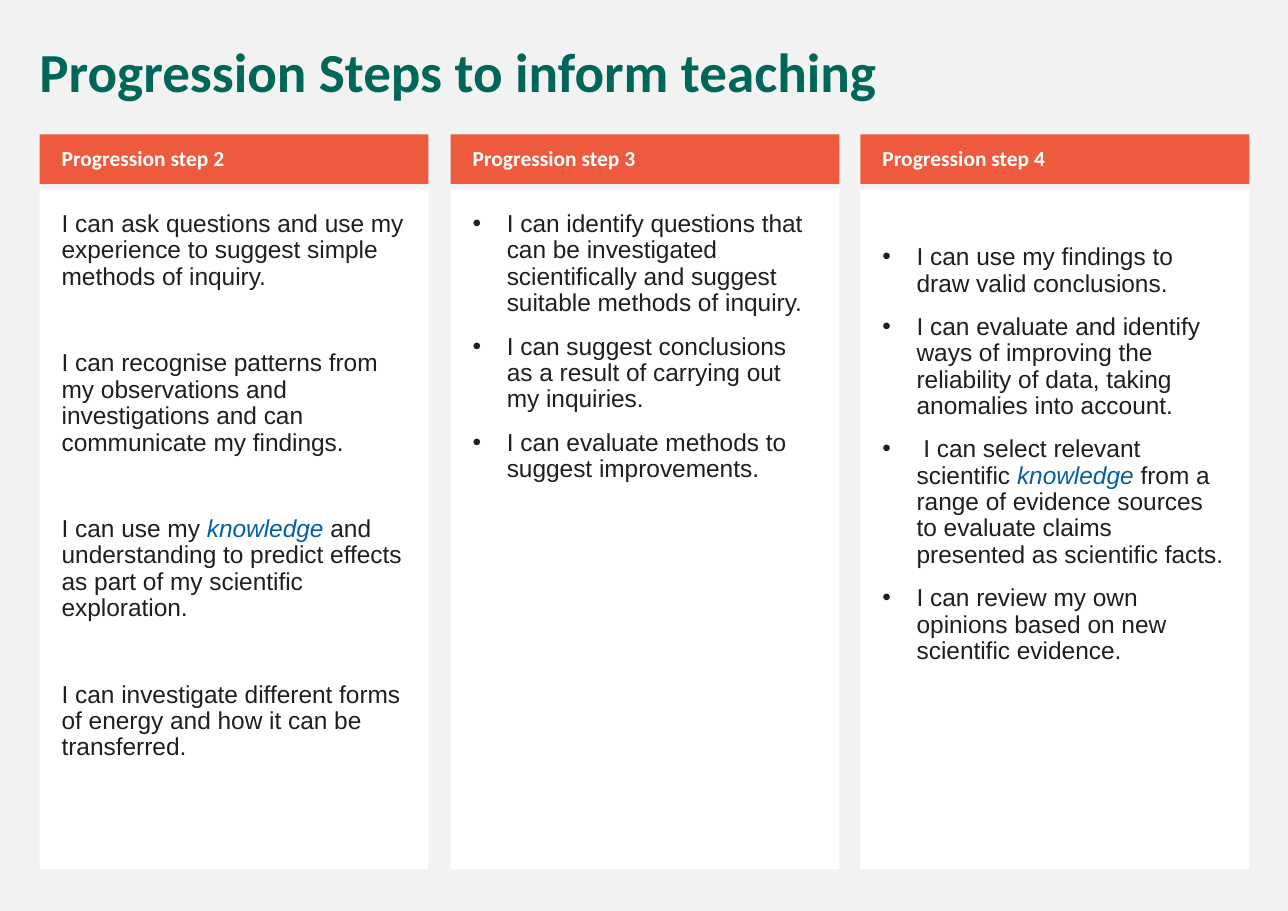
from lxml.etree import SubElement
from pptx import Presentation
from pptx.dml.color import RGBColor
from pptx.enum.shapes import MSO_SHAPE
from pptx.enum.text import MSO_ANCHOR, PP_ALIGN
from pptx.oxml.ns import qn
from pptx.util import Inches, Pt

BACKGROUND = RGBColor(0xF2, 0xF2, 0xF2)
GREEN = RGBColor(0x00, 0x67, 0x58)
ORANGE = RGBColor(0xED, 0x5A, 0x3E)
WHITE = RGBColor(0xFF, 0xFF, 0xFF)
INK = RGBColor(0x1F, 0x1F, 0x1F)
BLUE = RGBColor(0x03, 0x60, 0xA6)

# Left edge, heading, top inset, bullets, space between paragraphs, statements.
# Asterisks enclose the highlighted words.
COLUMNS = [
    (0.36, "Progression step 2", 0.2, False, 39.2, [
        "I can ask questions and use my experience to suggest simple methods of inquiry.",
        "I can recognise patterns from my observations and investigations and can communicate my findings.",
        "I can use my *knowledge* and understanding to predict effects as part of my scientific exploration.",
        "I can investigate different forms of energy and how it can be transferred.",
    ]),
    (4.09, "Progression step 3", 0.2, True, 11, [
        "I can identify questions that can be investigated scientifically and suggest suitable methods of inquiry.",
        "I can suggest conclusions as a result of carrying out my inquiries.",
        "I can evaluate methods to suggest improvements.",
    ]),
    (7.81, "Progression step 4", 0.5, True, 11, [
        "I can use my findings to draw valid conclusions.",
        "I can evaluate and identify ways of improving the reliability of data, taking anomalies into account.",
        " I can select relevant scientific *knowledge* from a range of evidence sources to evaluate claims presented as scientific facts.",
        "I can review my own opinions based on new scientific evidence.",
    ]),
]


def write(shape, texts, size, color, font="Calibri", bold=True, insets=(0.1, 0.05, 0.1, 0.05),
          anchor=MSO_ANCHOR.TOP, space=11, bullets=False):
    frame = shape.text_frame
    frame.word_wrap = True
    frame.vertical_anchor = anchor
    frame.margin_left, frame.margin_top, frame.margin_right, frame.margin_bottom = map(Inches, insets)
    for index, text in enumerate(texts):
        paragraph = frame.add_paragraph() if index else frame.paragraphs[0]
        paragraph.alignment = PP_ALIGN.LEFT
        paragraph.line_spacing = 0.9
        paragraph.space_before = Pt(space if index else 11)
        if bullets:
            properties = paragraph._p.get_or_add_pPr()
            properties.set("marL", str(Inches(0.31)))
            properties.set("indent", str(Inches(-0.31)))
            SubElement(properties, qn("a:buFont"), typeface="Arial")
            SubElement(properties, qn("a:buChar"), char="•")
        for position, part in enumerate(text.split("*")):
            highlighted = position % 2 == 1
            run = paragraph.add_run()
            run.text = part
            run.font.name = font
            run.font.size = Pt(size)
            run.font.bold = bold
            run.font.italic = highlighted
            run.font.color.rgb = BLUE if highlighted else color


def add_panel(left, top, height, color):
    shape = slide.shapes.add_shape(MSO_SHAPE.RECTANGLE, Inches(left), Inches(top),
                                   Inches(3.53), Inches(height))
    shape.shadow.inherit = False
    shape.fill.solid()
    shape.fill.fore_color.rgb = color
    shape.line.fill.background()
    return shape


presentation = Presentation()
presentation.slide_width = Inches(11.69)
presentation.slide_height = Inches(8.27)
slide = presentation.slides.add_slide(presentation.slide_layouts[6])
slide.background.fill.solid()
slide.background.fill.fore_color.rgb = BACKGROUND

# Columns
for left, heading, top_inset, bullets, space, statements in COLUMNS:
    body = add_panel(left, 1.72, 6.17, WHITE)
    write(body, statements, 16, INK, font="Arial", bold=False,
          insets=(0.2, top_inset, 0.2, 0.2), space=space, bullets=bullets)
    header = add_panel(left, 1.22, 0.45, ORANGE)
    write(header, [heading], 14, WHITE, insets=(0.2, 0.05, 0.1, 0.05), anchor=MSO_ANCHOR.MIDDLE)

# Title
title = slide.shapes.add_textbox(Inches(0.26), Inches(0.36), Inches(11.08), Inches(0.65))
write(title, ["Progression Steps to inform teaching"], 36, GREEN)

presentation.save("out.pptx")
